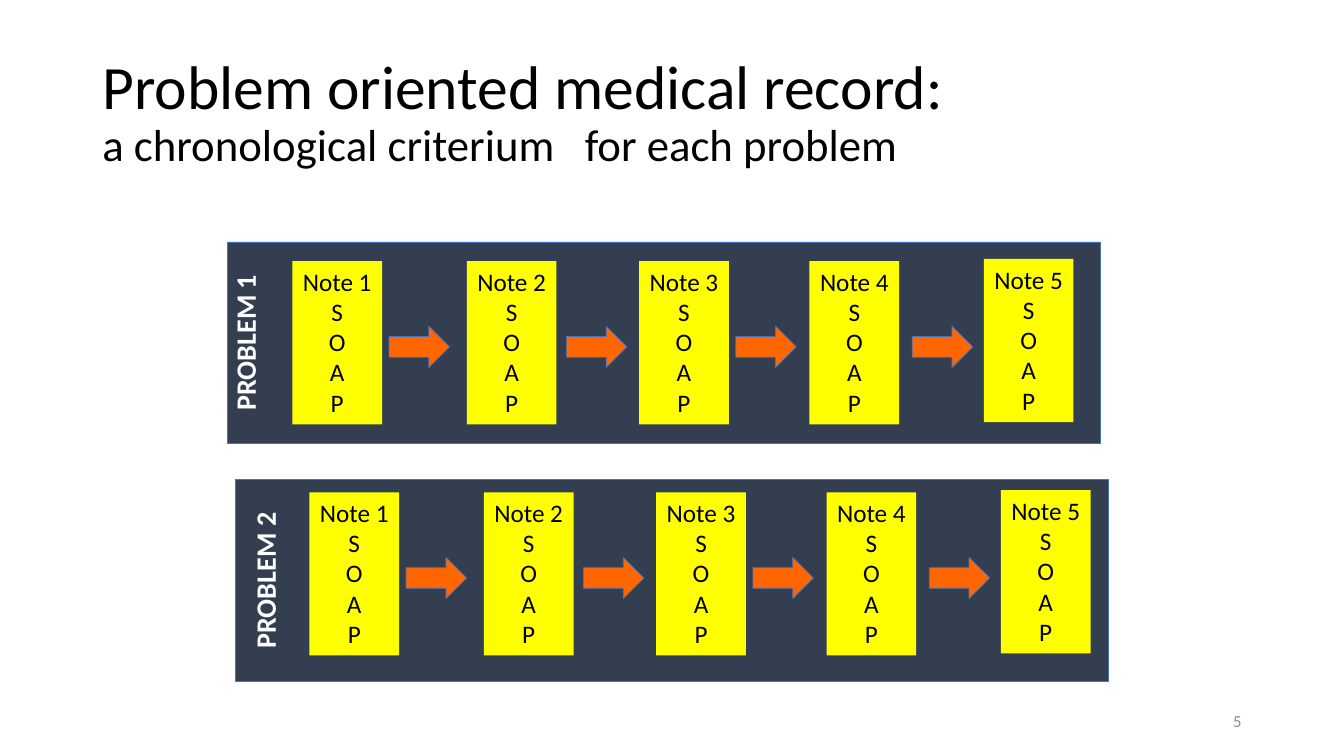
"""Build a slide of two problems, each a chain of SOAP notes."""
from pptx import Presentation
from pptx.dml import color
from pptx.enum import shapes, text
from pptx import util as u

TITLE = "Problem oriented medical record: \va chronological criterium   for each problem"
PAGE = "5"
ROWS = [
    {"label": "PROBLEM 1", "panel": (162.7, 172.8), "inset": 0, "notes": (208.8, 186.5)},
    {"label": "PROBLEM 2", "panel": (168.5, 342.7), "inset": 8.6, "notes": (221, 351.6)},
]
NOTES = [("Note 1", 0, 0), ("Note 2", 124.6, 0), ("Note 3", 247.7, 0),
         ("Note 4", 369.4, 0), ("Note 5", 493.9, -1.5)]
SOAP = "SOAP"
ARROWS = [69.1, 195.8, 316.8, 442.8]
DROP = 46.5
PANEL, NOTE, ARROW = (623.5, 144), (64.1, 116.6), (43.2, 29.5)
NAVY, GOLD, RUST, BLUE = "333F50", "FFFF00", "FF6600", "4472C4"
BLACK, WHITE, GREY = "000000", "FFFFFF", "8C8C8C"


def paint(part, tone):
    part.rgb = color.RGBColor.from_string(tone)


def style(frame, sizes, tone, align, bold=False):
    for para in frame.paragraphs:
        para.alignment = align
        for run, size in zip(para.runs, sizes):
            run.font.name = "Calibri"
            run.font.size = u.Pt(size)
            run.font.bold = bold
            paint(run.font.color, tone)


def block(kind, spot, size, fill, edge=None):
    shape = slide.shapes.add_shape(kind, *map(u.Pt, spot + size))
    shape.shadow.inherit = False
    shape.fill.solid()
    paint(shape.fill.fore_color, fill)
    if edge:
        paint(shape.line.color, edge)
        shape.line.width = u.Pt(0.5)
    else:
        shape.line.fill.background()
    return shape


def words(box, copy, sizes, tone, align):
    frame = slide.shapes.add_textbox(*map(u.Pt, box)).text_frame
    frame.word_wrap = True
    frame.vertical_anchor = text.MSO_ANCHOR.MIDDLE
    frame.paragraphs[0].text = copy
    style(frame, sizes, tone, align)
    return frame


def label(panel, copy, inset):
    frame = panel.text_frame
    frame.text = copy
    frame.vertical_anchor = text.MSO_ANCHOR.TOP
    frame.margin_left = frame.margin_right = u.Pt(inset)
    frame.margin_top = frame.margin_bottom = u.Pt(inset)
    frame._txBody.bodyPr.set("vert", "vert270")
    style(frame, [20], WHITE, text.PP_ALIGN.CENTER, True)


def note(spot, name):
    frame = block(shapes.MSO_SHAPE.RECTANGLE, spot, NOTE, GOLD).text_frame
    frame.text = "\n".join([name, *SOAP])
    frame.word_wrap = False
    frame.vertical_anchor = text.MSO_ANCHOR.TOP
    style(frame, [18], BLACK, text.PP_ALIGN.CENTER)


deck = Presentation()
deck.slide_width, deck.slide_height = u.Pt(960), u.Pt(540)
slide = deck.slides.add_slide(deck.slide_layouts[6])

title = words((66, 28.8, 828, 104.4), TITLE, [44, 32], BLACK, text.PP_ALIGN.LEFT)
title.paragraphs[0].line_spacing = 0.9
words((678, 500.5, 216, 28.8), PAGE, [12], GREY, text.PP_ALIGN.RIGHT)

for row in ROWS:
    panel = block(shapes.MSO_SHAPE.RECTANGLE, row["panel"], PANEL, NAVY, BLUE)
    label(panel, row["label"], row["inset"])
    left, top = row["notes"]
    for name, step, lift in NOTES:
        note((left + step, top + lift), name)
    for step in ARROWS:
        block(shapes.MSO_SHAPE.RIGHT_ARROW, (left + step, top + DROP), ARROW, RUST, BLUE)

deck.save("out.pptx")
